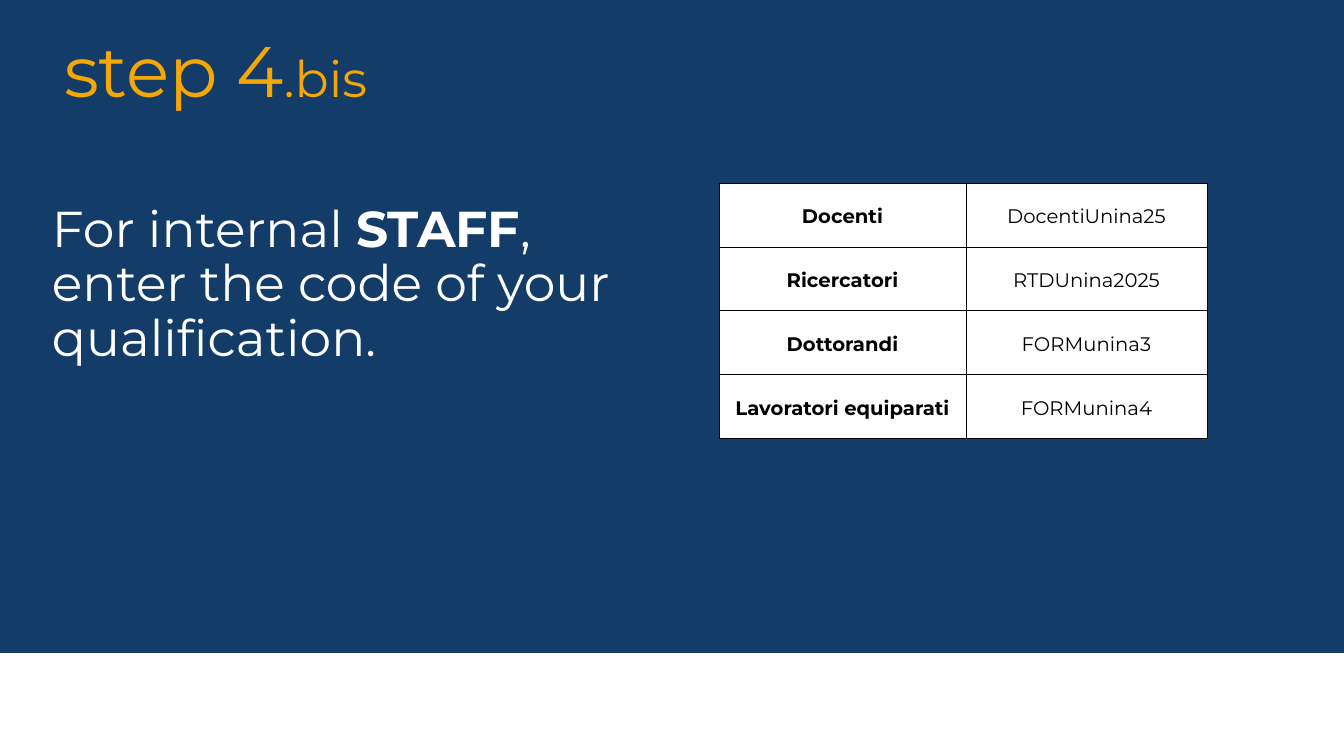
import pptx
import pptx.dml.color
import pptx.enum.shapes
import pptx.enum.text
import pptx.oxml
import pptx.oxml.ns
import pptx.util

RGBColor = pptx.dml.color.RGBColor
NAVY = RGBColor(0x14, 0x3C, 0x69)
AMBER = RGBColor(0xF5, 0xA7, 0x04)
WHITE = RGBColor(0xFF, 0xFF, 0xFF)
BLACK = RGBColor(0x00, 0x00, 0x00)
FONT = "Montserrat"

# Runs: text, size in points, bold
TITLE = [("step 4", 51, False), (".bis", 36, False)]
INSTRUCTION = [
    ("For internal ", 36, False),
    ("STAFF", 36, True),
    (", enter the code of your qualification.", 36, False),
]
CODES = [
    ("Docenti", "DocentiUnina25"),
    ("Ricercatori", "RTDUnina2025"),
    ("Dottorandi", "FORMunina3"),
    ("Lavoratori equiparati", "FORMunina4"),
]

# Boxes in px: left, top, width, height
SLIDE_SIZE = (1344, 756)
PANEL = (0, 0, 1344, 653)
TITLE_BOX = (54, 26, 590, 93)
INSTRUCTION_BOX = (42, 194, 587, 440)
TABLE_ORIGIN = (719, 183)
COLUMN_WIDTHS = (247, 241)
ROW_HEIGHT = 64
TEXT_INSET = 10
CELL_INSETS = (3, 2, 3, 2)
BORDER_WIDTH = pptx.util.Pt(0.75)


def px(length):
    return pptx.util.Emu(round(length * 914400 / 100.8))


def add_run(paragraph, text, size, bold, color):
    run = paragraph.add_run()
    run.text = text
    font = run.font
    font.name, font.size, font.bold = FONT, pptx.util.Pt(size), bold
    font.color.rgb = color


def add_text(slide, box, runs, color):
    text_frame = slide.shapes.add_textbox(*map(px, box)).text_frame
    text_frame.word_wrap = True
    text_frame.margin_left = text_frame.margin_right = px(TEXT_INSET)
    text_frame.margin_top = text_frame.margin_bottom = px(TEXT_INSET)
    paragraph = text_frame.paragraphs[0]
    paragraph.line_spacing = 0.9
    for text, size, bold in runs:
        add_run(paragraph, text, size, bold, color)


def add_borders(cell):
    """Outline all four sides; the lines must precede the cell's fill."""
    properties = cell._tc.get_or_add_tcPr()
    for index, side in enumerate(("lnL", "lnR", "lnT", "lnB")):
        line = pptx.oxml.parse_xml(
            f'<a:{side} {pptx.oxml.ns.nsdecls("a")} w="{BORDER_WIDTH}">'
            f'<a:solidFill><a:srgbClr val="{BLACK}"/></a:solidFill></a:{side}>'
        )
        properties.insert(index, line)


def add_code_table(slide):
    size = (sum(COLUMN_WIDTHS), ROW_HEIGHT * len(CODES))
    table = slide.shapes.add_table(
        len(CODES), len(COLUMN_WIDTHS), *map(px, TABLE_ORIGIN + size)
    ).table
    table.first_row = table.horz_banding = False
    for column, width in zip(table.columns, COLUMN_WIDTHS):
        column.width = px(width)
    for row_index, texts in enumerate(CODES):
        table.rows[row_index].height = px(ROW_HEIGHT)
        for column_index, text in enumerate(texts):
            cell = table.cell(row_index, column_index)
            cell.fill.solid()
            cell.fill.fore_color.rgb = WHITE
            cell.vertical_anchor = pptx.enum.text.MSO_ANCHOR.MIDDLE
            (cell.margin_left, cell.margin_top,
             cell.margin_right, cell.margin_bottom) = map(px, CELL_INSETS)
            paragraph = cell.text_frame.paragraphs[0]
            paragraph.alignment = pptx.enum.text.PP_ALIGN.CENTER
            paragraph.line_spacing = 1.15
            add_run(paragraph, text, 14, column_index == 0, BLACK)
            add_borders(cell)


def main():
    presentation = pptx.Presentation()
    presentation.slide_width, presentation.slide_height = map(px, SLIDE_SIZE)
    slide = presentation.slides.add_slide(presentation.slide_layouts[6])

    panel = slide.shapes.add_shape(
        pptx.enum.shapes.MSO_SHAPE.RECTANGLE, *map(px, PANEL)
    )
    panel.shadow.inherit = False
    panel.fill.solid()
    panel.fill.fore_color.rgb = NAVY
    panel.line.fill.background()

    add_text(slide, INSTRUCTION_BOX, INSTRUCTION, WHITE)
    add_code_table(slide)
    add_text(slide, TITLE_BOX, TITLE, AMBER)
    presentation.save("out.pptx")


if __name__ == "__main__":
    main()
